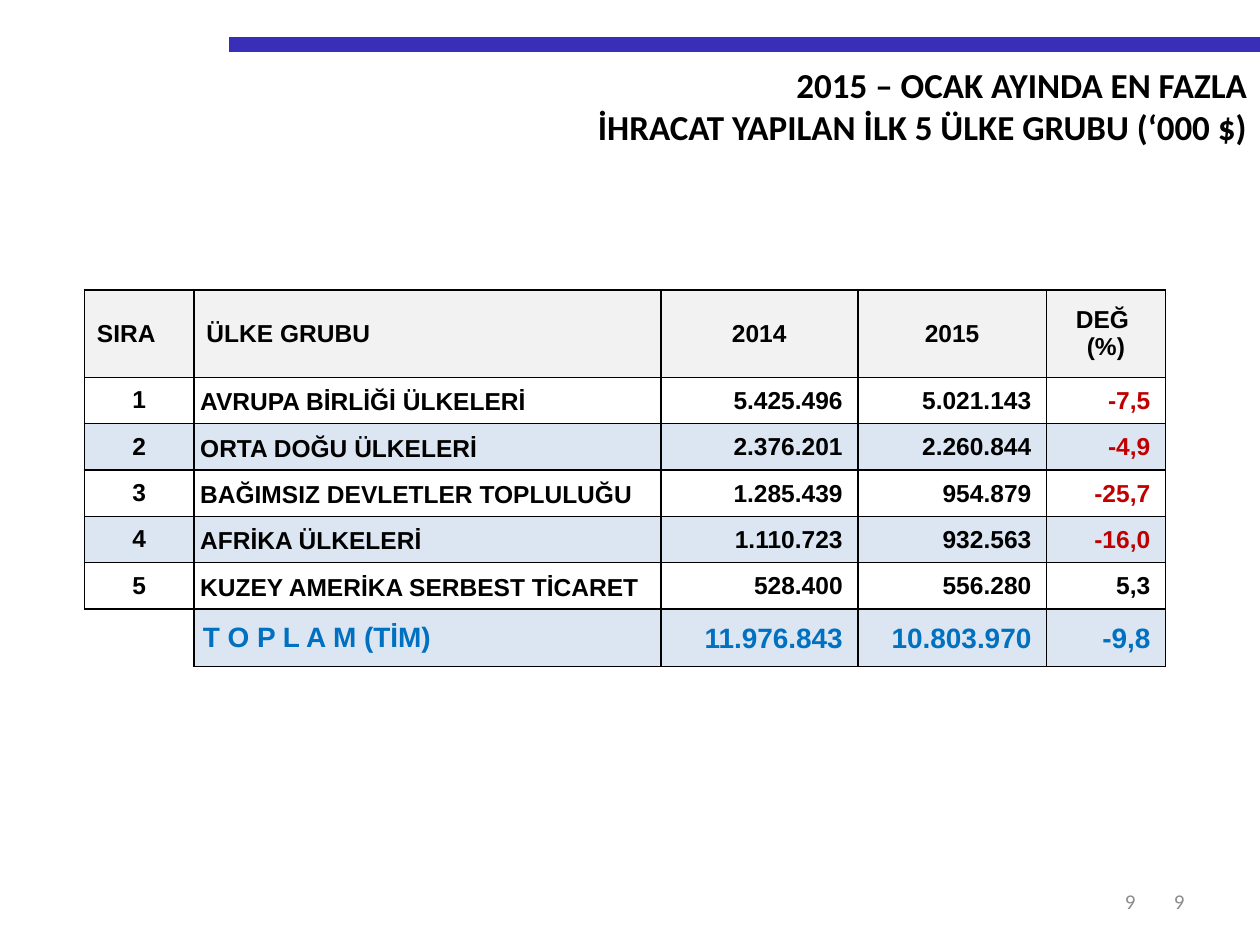
from lxml.etree import SubElement as Sub
from pptx import Presentation
from pptx.dml.color import RGBColor as Rgb
from pptx.enum.shapes import MSO_CONNECTOR as Conn
from pptx.enum.text import MSO_ANCHOR as Anchor, PP_ALIGN as Align
from pptx.oxml.ns import qn
from pptx.util import Pt

HUES = {"ink": "000000", "bar": "382EB8", "note": "8C8C8C", "head": "F2F2F2",
        "band": "DCE6F2", "loss": "C00000", "total": "0070C0"}
TITLE = ["2015 – OCAK AYINDA EN FAZLA", "İHRACAT YAPILAN İLK 5 ÜLKE GRUBU (‘000 $)"]
HEADS = ["SIRA", "ÜLKE GRUBU", "2014", "2015", "DEĞ \n(%)"]
ROWS = [
    ["1", "AVRUPA BİRLİĞİ ÜLKELERİ", "5.425.496", "5.021.143", "-7,5"],
    ["2", "ORTA DOĞU ÜLKELERİ", "2.376.201", "2.260.844", "-4,9"],
    ["3", "BAĞIMSIZ DEVLETLER TOPLULUĞU", "1.285.439", "954.879", "-25,7"],
    ["4", "AFRİKA ÜLKELERİ", "1.110.723", "932.563", "-16,0"],
    ["5", "KUZEY AMERİKA SERBEST TİCARET", "528.400", "556.280", "5,3"],
]
TOTAL = ["", "T O P L A M (TİM)", "11.976.843", "10.803.970", "-9,8"]
WIDTHS = [62.6, 266.8, 112.6, 107.8, 68]
HEIGHTS = [50] + [26.5] * len(ROWS) + [33]
PAGES = [(516.24, 167.76), (504.72, 151.2)]


def write(frame, lines, size, font, hue, align, bold=True, gap=None):
    """Fill a text frame, one paragraph for each line."""
    frame.word_wrap = True
    for i, line in enumerate(lines):
        para = frame.add_paragraph() if i else frame.paragraphs[0]
        para.alignment = align
        if gap:
            para.line_spacing = gap
        run = para.add_run()
        run.text = line
        run.font.size, run.font.name, run.font.bold = Pt(size), font, bold
        run.font.color.rgb = Rgb.from_string(HUES[hue])


def edge(cell, sides):
    """Draw the chosen cell borders and clear the others."""
    props = cell._tc.get_or_add_tcPr()
    for i, side in enumerate("LRTB"):
        line = props.makeelement(qn(f"a:ln{side}"), {"w": str(Pt(1))})
        if side in sides:
            fill = Sub(line, qn("a:solidFill"))
            Sub(fill, qn("a:srgbClr"), val=HUES["ink"])
        else:
            Sub(line, qn("a:noFill"))
        props.insert(i, line)


def inset(cell, left, top, right, base):
    """Set the four cell margins."""
    cell.margin_left, cell.margin_top = Pt(left), Pt(top)
    cell.margin_right, cell.margin_bottom = Pt(right), Pt(base)


def style(cell, text, row, col):
    """Format one cell by its row and column."""
    head, last = row == 0, row == len(ROWS) + 1
    cell.vertical_anchor = Anchor.MIDDLE
    blank = last and not text
    if blank or (row % 2 and not last):
        cell.fill.background()
    else:
        cell.fill.solid()
        cell.fill.fore_color.rgb = Rgb.from_string(HUES["head" if head else "band"])
    edge(cell, "RT" if blank else "LRTB")
    if blank:
        return
    align, gap = Align.CENTER, None
    if head:
        align = Align.LEFT if col < 2 else Align.CENTER
    elif col == 1:
        align, gap = Align.LEFT, None if last else 1.15
        inset(cell, 5.2 if last else 3.6, 0, 3.6, 0)
    elif col > 1:
        align = Align.RIGHT
        inset(cell, 0.7, 0.7, 8.6, 0)
    loss = col == 4 and text.startswith("-")
    hue = "total" if last else "loss" if loss else "ink"
    write(cell.text_frame, text.split("\n"), 16 if last else 14, "Arial", hue, align, gap=gap)


def main():
    """Build and save the slide."""
    deck = Presentation()
    deck.slide_width, deck.slide_height = Pt(720), Pt(540)
    slide = deck.slides.add_slide(deck.slide_layouts[5])
    shapes = slide.shapes

    bar = shapes.add_connector(Conn.STRAIGHT, Pt(131), Pt(25.4), Pt(720), Pt(25.4))
    bar.line.color.rgb = Rgb.from_string(HUES["bar"])
    bar.line.width = Pt(8.5)
    Sub(bar._element.spPr, qn("a:effectLst"))

    title = shapes.title
    title.left, title.top, title.width, title.height = Pt(76.3), Pt(32.4), Pt(643.7), Pt(55.4)
    title.text_frame.vertical_anchor = Anchor.TOP
    write(title.text_frame, TITLE, 20, "Calibri", "ink", Align.RIGHT)

    for left, width in PAGES:
        page = shapes.add_textbox(Pt(left), Pt(500.5), Pt(width), Pt(28.8)).text_frame
        page.vertical_anchor = Anchor.MIDDLE
        write(page, ["9"], 12, "Calibri", "note", Align.RIGHT, False)

    data = [HEADS, *ROWS, TOTAL]
    table = shapes.add_table(len(data), len(HEADS), Pt(48.2), Pt(165.6),
                             Pt(sum(WIDTHS)), Pt(sum(HEIGHTS))).table
    table.first_row = table.horz_banding = False
    for col, width in zip(table.columns, WIDTHS):
        col.width = Pt(width)
    for r, (line, height) in enumerate(zip(data, HEIGHTS)):
        table.rows[r].height = Pt(height)
        for c, text in enumerate(line):
            style(table.cell(r, c), text, r, c)

    deck.save("out.pptx")


if __name__ == "__main__":
    main()
